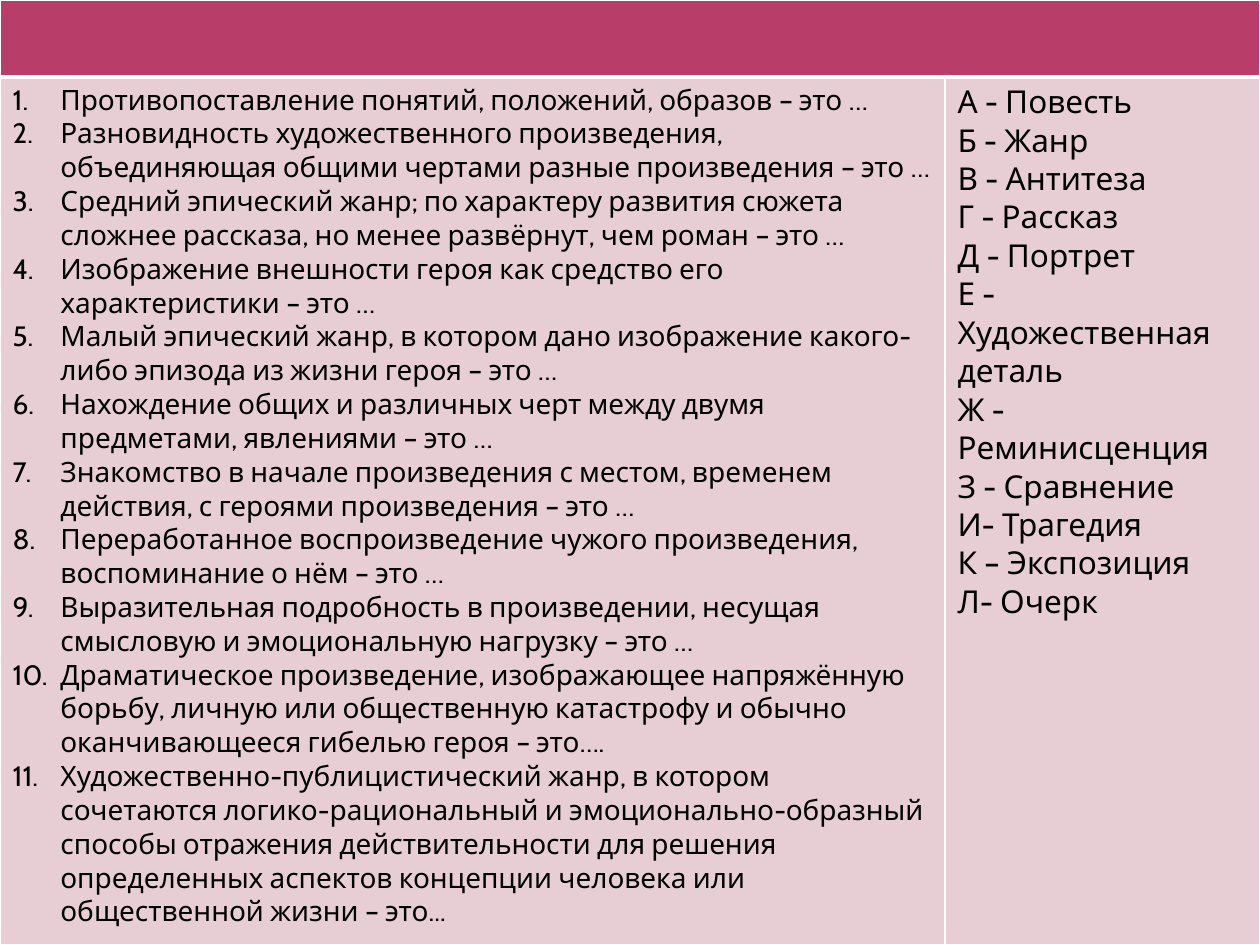
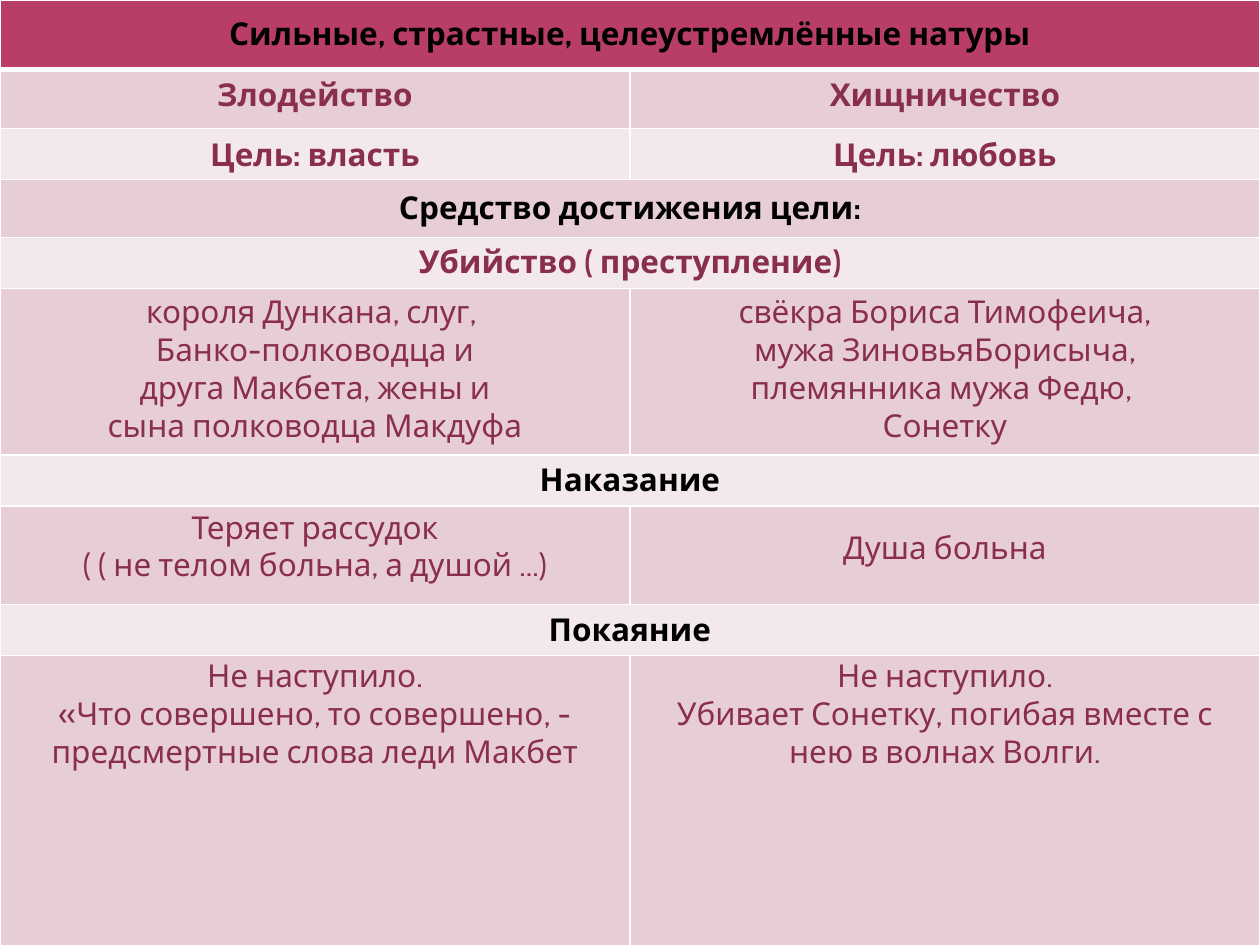
from itertools import accumulate

from lxml import etree
from pptx import Presentation
from pptx.dml.color import RGBColor
from pptx.enum.text import MSO_ANCHOR as Anchor, MSO_AUTO_SIZE as AutoSize, PP_ALIGN as Align
from pptx.oxml import parse_xml
from pptx.oxml.ns import nsdecls, qn
from pptx.util import Inches, Pt

FONT = "Cabin"
COLORS = {
    "header": "B83D68",
    "dark_row": "E6CED4",
    "light_row": "F3E8EB",
    "border": "FFFFFF",
    "black": "000000",
    "wine": "8A2E4E",
}

DEFINITIONS = [
    "Противопоставление понятий, положений, образов – это …",
    "Разновидность художественного произведения, объединяющая общими чертами разные произведения – это …",
    "Средний эпический жанр; по характеру развития сюжета сложнее рассказа, но менее развёрнут, чем роман – это …",
    "Изображение внешности героя как средство его характеристики – это …",
    "Малый эпический жанр, в котором дано изображение какого-либо эпизода из жизни героя – это …",
    "Нахождение общих и различных черт между двумя предметами, явлениями – это …",
    "Знакомство в начале произведения с местом, временем действия, с героями произведения – это …",
    "Переработанное воспроизведение чужого произведения, воспоминание о нём – это …",
    "Выразительная подробность в произведении, несущая смысловую и эмоциональную нагрузку – это …",
    "Драматическое произведение, изображающее напряжённую борьбу, личную или общественную катастрофу "
    "и обычно оканчивающееся гибелью героя – это….",
    "Художественно-публицистический жанр, в котором сочетаются логико-рациональный и эмоционально-образный "
    "способы отражения действительности для решения определенных аспектов концепции человека "
    "или общественной жизни – это...",
]
TERMS = [
    "А - Повесть", "Б - Жанр", "В - Антитеза", "Г - Рассказ", "Д - Портрет",
    "Е - Художественная деталь", "Ж - Реминисценция", "З - Сравнение",
    "И- Трагедия", "К – Экспозиция", "Л- Очерк",
]

ROW_HEIGHTS = [0.55, 0.47, 0.39, 0.46, 0.4, 1.32, 0.39, 0.78, 0.4, 2.34]
MERGED_ROWS = [0, 3, 4, 6, 8]
# row: (text, anchor)
HEADINGS = {
    0: ("Сильные, страстные, целеустремлённые натуры", Anchor.MIDDLE),
    3: ("Средство достижения цели:", Anchor.MIDDLE),
    6: ("Наказание", Anchor.TOP),
    8: ("Покаяние", Anchor.TOP),
}
# (row, column, columns covered, height, drop below the row top, bold, text)
ANSWERS = [
    (1, 0, 1, 0.4, 0, True, "Злодейство"),
    (1, 1, 1, 0.4, 0, True, "Хищничество"),
    (2, 0, 1, 0.4, 0, True, "Цель: власть"),
    (2, 1, 1, 0.4, 0, True, "Цель: любовь"),
    (4, 0, 2, 0.4, 0, True, "Убийство ( преступление)"),
    (5, 0, 1, 1.31, 0, False,
     "короля Дункана, слуг, \nБанко-полководца и\nдруга Макбета, жены и\nсына полководца Макдуфа"),
    (5, 1, 1, 1.31, 0, False,
     "свёкра Бориса Тимофеича,\nмужа ЗиновьяБорисыча,\nплемянника мужа Федю, \nСонетку"),
    (7, 0, 1, 0.71, 0, False, "Теряет рассудок\n( ( не телом больна, а душой ...)"),
    (7, 1, 1, 0.4, 0.16, False, "Душа больна"),
    (9, 0, 1, 1.01, 0, False,
     "Не наступило.\n«Что совершено, то совершено, - предсмертные слова леди Макбет"),
    (9, 1, 1, 1.01, 0, False,
     "Не наступило.\nУбивает Сонетку, погибая вместе с нею в волнах Волги."),
]


class SlideBuilder:
    """Holds the shared style and the slide being filled."""

    def __init__(self):
        self.deck = Presentation()
        self.deck.slide_width = Inches(10)
        self.deck.slide_height = Inches(7.5)
        self.page = None

    def new_page(self):
        self.page = self.deck.slides.add_slide(self.deck.slide_layouts[6])

    def fill_text(self, frame, lines, size=18, color="black", bold=False, align=Align.LEFT, numbered=False):
        """Put one paragraph per item of lines into the frame."""
        for index, line in enumerate(lines):
            para = frame.add_paragraph() if index else frame.paragraphs[0]
            para.text = line
            para.alignment = align
            if numbered:
                self.number(para)
            for span in para.runs:
                span.font.name = FONT
                span.font.size = Pt(size)
                span.font.bold = bold
                span.font.color.rgb = RGBColor.from_string(COLORS[color])

    def number(self, para):
        props = para._p.get_or_add_pPr()
        props.set("marL", str(Inches(0.38)))
        props.set("indent", str(-Inches(0.38)))
        etree.SubElement(props, qn("a:buFont"), typeface=FONT)
        etree.SubElement(props, qn("a:buAutoNum"), type="arabicPeriod")

    def borders(self, cell, top, bottom):
        widths = {"lnL": 1, "lnR": 1, "lnT": top, "lnB": bottom}
        for index, (side, width) in enumerate(widths.items()):
            line = parse_xml(
                f'<a:{side} {nsdecls("a")} w="{Pt(width)}"><a:solidFill>'
                f'<a:srgbClr val="{COLORS["border"]}"/></a:solidFill></a:{side}>')
            cell._tc.get_or_add_tcPr().insert(index, line)

    def table(self, widths, heights, merged_rows):
        """Add a full-slide table with a header row and banded rows."""
        grid = self.page.shapes.add_table(
            len(heights), len(widths), 0, 0, self.deck.slide_width, self.deck.slide_height).table
        for column, width in zip(grid.columns, widths):
            column.width = Inches(width)
        for index, (row, height) in enumerate(zip(grid.rows, heights)):
            row.height = Inches(height)
            band = "dark_row" if index % 2 else "light_row"
            for cell in row.cells:
                cell.fill.solid()
                cell.fill.fore_color.rgb = RGBColor.from_string(COLORS[band if index else "header"])
                self.borders(cell, top=3 if index == 1 else 1, bottom=1 if index else 3)
        for index in merged_rows:
            grid.cell(index, 0).merge(grid.cell(index, len(widths) - 1))
        return grid

    def label(self, left, top, width, height, text, bold):
        box = self.page.shapes.add_textbox(Inches(left), Inches(top), Inches(width), Inches(height))
        frame = box.text_frame
        frame.word_wrap = True
        frame.auto_size = AutoSize.SHAPE_TO_FIT_TEXT
        self.fill_text(frame, [text], color="wine", bold=bold, align=Align.CENTER)


def add_matching_page(builder):
    builder.new_page()
    grid = builder.table([7.5, 2.5], [0.61, 6.89], [0])
    builder.fill_text(grid.cell(1, 0).text_frame, DEFINITIONS, size=16, numbered=True)
    builder.fill_text(grid.cell(1, 1).text_frame, TERMS)


def add_comparison_page(builder):
    builder.new_page()
    column_width = 5
    grid = builder.table([column_width] * 2, ROW_HEIGHTS, MERGED_ROWS)
    for row, (text, anchor) in HEADINGS.items():
        cell = grid.cell(row, 0)
        cell.vertical_anchor = anchor
        builder.fill_text(cell.text_frame, [text], bold=True, align=Align.CENTER)
    row_tops = list(accumulate(ROW_HEIGHTS, initial=0))
    for row, column, span, height, drop, bold, text in ANSWERS:
        builder.label(column * column_width, row_tops[row] + drop, span * column_width, height, text, bold)


def main():
    builder = SlideBuilder()
    add_matching_page(builder)
    add_comparison_page(builder)
    builder.deck.save("out.pptx")


if __name__ == "__main__":
    main()
